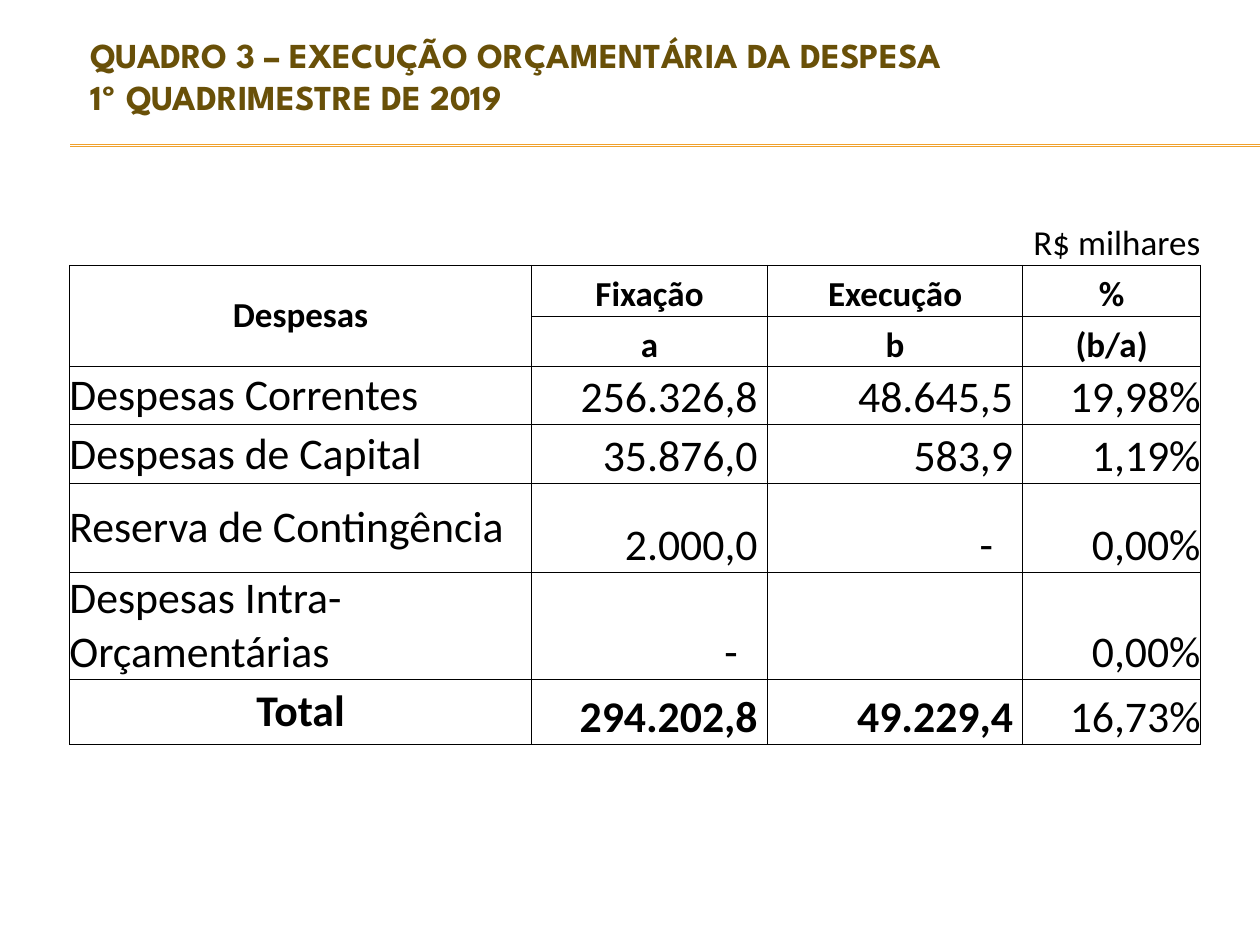
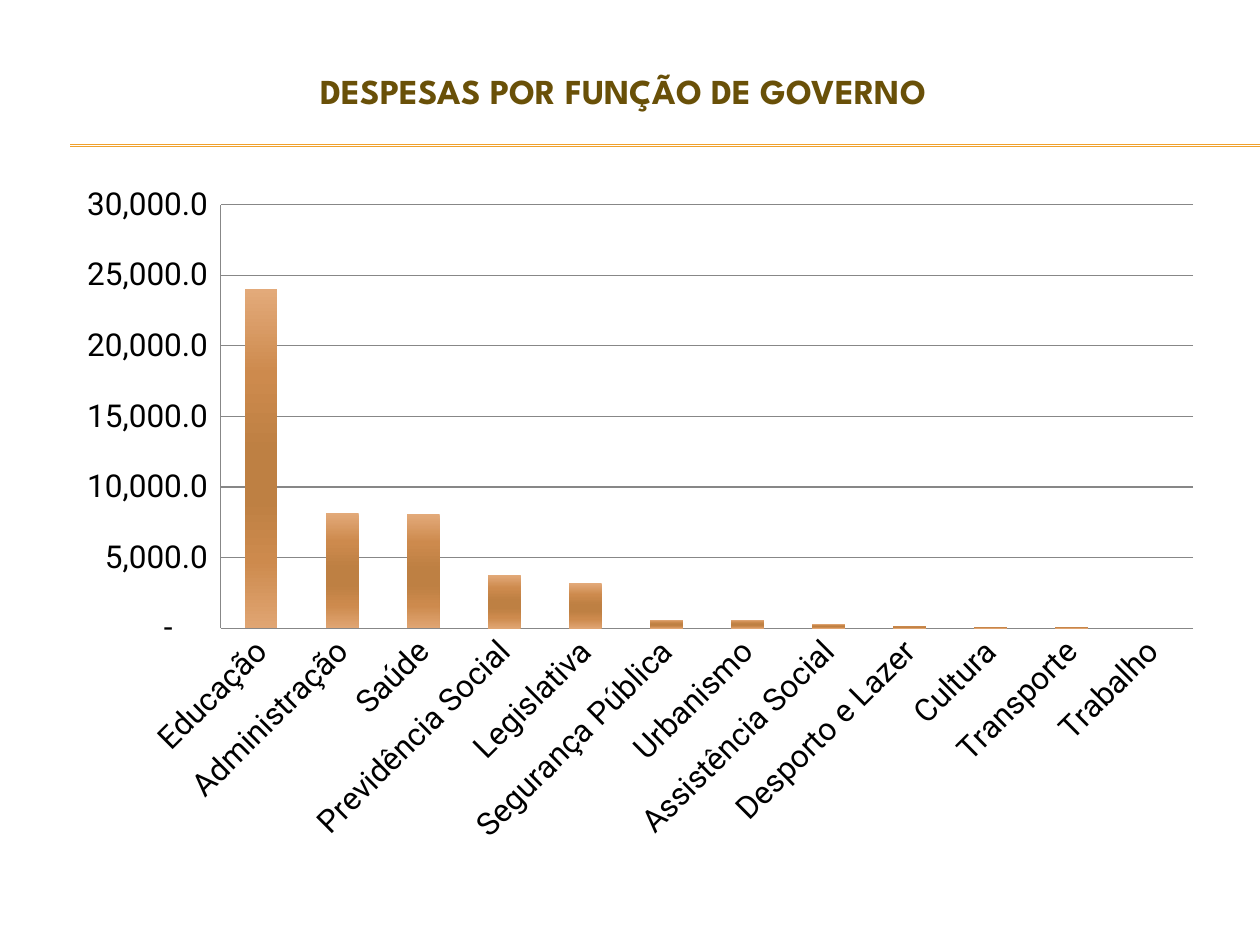
from dataclasses import dataclass
from lxml import etree
from pptx import Presentation
from pptx.chart.data import CategoryChartData
from pptx.dml.color import RGBColor
from pptx.enum.chart import XL_CHART_TYPE as CT, XL_TICK_MARK as TICK
from pptx.enum.shapes import MSO_CONNECTOR
from pptx.enum.text import MSO_ANCHOR as ANCHOR, PP_ALIGN as ALIGN
from pptx.oxml import parse_xml
from pptx.oxml.ns import nsdecls, qn
from pptx.util import Cm, Pt

COLORS = {"title": "695008", "rule": "F0A22E", "text": "000000", "axis": "878787"}
# Bar gradient: position in percent, colour
BAR_STOPS = [(0, "E3AA7A"), (25, "CD8A4D"), (48, "BE8043"), (62, "BE8043"),
             (80, "CD8A4D"), (100, "E0A573")]
TITLE_FONT, TABLE_FONT, CHART_FONT = "League Spartan", "Calibri", "Roboto"


@dataclass
class Box:
    left: float
    top: float
    width: float
    height: float

    def cm(self) -> tuple:
        return Cm(self.left), Cm(self.top), Cm(self.width), Cm(self.height)


@dataclass
class Expense:
    name: str
    fixed: str
    spent: str
    share: str
    total: bool = False


def rgb(name: str) -> RGBColor:
    return RGBColor.from_string(COLORS[name])


def write(tf, text: str, *, size: float, font: str, color: str = "text",
          bold: bool = False, align=ALIGN.LEFT) -> None:
    p = tf.paragraphs[0]
    p.alignment = align
    for i, line in enumerate(text.split("\n")):
        if i:
            p.add_line_break()
        r = p.add_run()
        r.text = line
        r.font.size, r.font.name, r.font.bold = Pt(size), font, bold
        r.font.color.rgb = rgb(color)


# Shared slide frame: double rule and title
def add_rule(s, y: float) -> None:
    line = s.shapes.add_connector(MSO_CONNECTOR.STRAIGHT, Cm(1.42), Cm(y), Cm(25.4), Cm(y))
    line.line.color.rgb = rgb("rule")
    line.line.width = Pt(0.75)
    etree.SubElement(line._element.spPr, qn("a:effectLst"))


def add_titled_slide(prs, title: str, box: Box, align):
    s = prs.slides.add_slide(prs.slide_layouts[6])
    for y in (2.92, 2.95):
        add_rule(s, y)
    tf = s.shapes.add_textbox(*box.cm()).text_frame
    tf.word_wrap = True
    tf.vertical_anchor = ANCHOR.MIDDLE
    write(tf, title, size=20, font=TITLE_FONT, color="title", bold=True, align=align)
    return s


# Table of expenses
COL_WIDTHS = [9.32, 0.33, 4.42, 2.51, 2.64, 3.58]
ROW_HEIGHTS = [1.78, 1.02, 1.02, 1.17, 1.19, 1.78, 2.16, 1.32]
HEADERS = [("Fixação", "a"), ("Execução", "b"), ("%", "(b/a)")]
VALUE_COLS = (1, 3, 5)
EXPENSES = [
    Expense("Despesas Correntes", "256.326,8", "48.645,5", "19,98%"),
    Expense("Despesas de Capital", "35.876,0", "583,9", "1,19%"),
    Expense("Reserva de Contingência", "2.000,0", "-", "0,00%"),
    Expense("Despesas Intra-Orçamentárias", "-", "", "0,00%"),
    Expense("Total", "294.202,8", "49.229,4", "16,73%", total=True),
]


def style_cell(cell, sides: str) -> None:
    cell.margin_left = cell.margin_right = cell.margin_top = cell.margin_bottom = 0
    cell.fill.background()
    tc_pr = cell._tc.get_or_add_tcPr()
    for i, side in enumerate(sides):
        tc_pr.insert(i, parse_xml(
            f'<a:ln{side} {nsdecls("a")} w="6350"><a:solidFill>'
            f'<a:srgbClr val="{COLORS["text"]}"/></a:solidFill></a:ln{side}>'))


def fill_cell(cell, text: str, *, anchor=ANCHOR.BOTTOM, inset: float = 0,
              size: float = 20, **fmt) -> None:
    cell.vertical_anchor = anchor
    cell.margin_right = Cm(inset)
    write(cell.text_frame, text, size=size, font=TABLE_FONT, **fmt)


def add_expense_table(s) -> None:
    box = Box(1.4, 3.57, sum(COL_WIDTHS), sum(ROW_HEIGHTS))
    tbl = s.shapes.add_table(len(ROW_HEIGHTS), len(COL_WIDTHS), *box.cm()).table
    tbl.first_row = tbl.horz_banding = False
    for col, width in zip(tbl.columns, COL_WIDTHS):
        col.width = Cm(width)
    for i, (row, height) in enumerate(zip(tbl.rows, ROW_HEIGHTS)):
        row.height = Cm(height)
        for cell in row.cells:
            style_cell(cell, "LRTB" if i else "B")
        if i:
            for c in (1, 3):
                tbl.cell(i, c).merge(tbl.cell(i, c + 1))
    tbl.cell(1, 0).merge(tbl.cell(2, 0))

    # Unit and headings
    fill_cell(tbl.cell(0, 5), "R$ milhares", align=ALIGN.RIGHT)
    fill_cell(tbl.cell(1, 0), "Despesas", anchor=ANCHOR.MIDDLE, bold=True, align=ALIGN.CENTER)
    for c, pair in zip(VALUE_COLS, HEADERS):
        for i, text in enumerate(pair, 1):
            fill_cell(tbl.cell(i, c), text, bold=True, align=ALIGN.CENTER)

    # Body
    for i, e in enumerate(EXPENSES, 3):
        fill_cell(tbl.cell(i, 0), e.name, anchor=ANCHOR.MIDDLE, size=25, bold=e.total,
                  align=ALIGN.CENTER if e.total else ALIGN.LEFT)
        for c, text in zip(VALUE_COLS, (e.fixed, e.spent, e.share)):
            if text:
                is_share = c == VALUE_COLS[-1]
                inset = 0 if is_share else 0.6 if text == "-" else 0.2
                fill_cell(tbl.cell(i, c), text, size=25, inset=inset,
                          bold=e.total and not is_share, align=ALIGN.RIGHT)


# Chart of spending by function
SPENDING = {
    "Educação": 24000, "Administração": 8200, "Saúde": 8100, "Previdência Social": 3800,
    "Legislativa": 3200, "Segurança Pública": 600, "Urbanismo": 600,
    "Assistência Social": 300, "Desporto e Lazer": 200, "Cultura": 100,
    "Transporte": 100, "Trabalho": 0,
}
NUMBER_FORMAT = '_-* #,##0.0_-;\\-* #,##0.0_-;_-* "-"??_-;_-@_-'
PLOT_LAYOUT = {"x": 0.155, "y": 0.144, "w": 0.83, "h": 0.525}


def set_plot_layout(chart) -> None:
    area = chart._chartSpace.chart.plotArea
    for old in area.findall(qn("c:layout")):
        area.remove(old)
    modes = "".join(f'<c:{k}Mode val="edge"/>' for k in "xy")
    sizes = "".join(f'<c:{k} val="{v}"/>' for k, v in PLOT_LAYOUT.items())
    area.insert(0, parse_xml(
        f'<c:layout {nsdecls("c")}><c:manualLayout><c:layoutTarget val="inner"/>'
        f'{modes}{sizes}</c:manualLayout></c:layout>'))


def set_bar_gradient(series) -> None:
    stops = "".join(f'<a:gs pos="{pos * 1000}"><a:srgbClr val="{color}"/></a:gs>'
                    for pos, color in BAR_STOPS)
    sp_pr = series._element.get_or_add_spPr()
    sp_pr.insert(0, parse_xml(
        f'<a:gradFill {nsdecls("a")} rotWithShape="1"><a:gsLst>{stops}</a:gsLst>'
        f'<a:lin ang="5400000" scaled="0"/></a:gradFill>'))


def add_spending_chart(s) -> None:
    data = CategoryChartData()
    data.categories = list(SPENDING)
    data.add_series("Series 1", list(SPENDING.values()))
    box = Box(0.79, 1.78, 23.62, 16.28)
    chart = s.shapes.add_chart(CT.COLUMN_CLUSTERED, *box.cm(), data).chart
    chart.has_legend = chart.has_title = False
    chart.font.size, chart.font.name = Pt(18), CHART_FONT
    chart.font.color.rgb = rgb("text")
    set_plot_layout(chart)

    plot = chart.plots[0]
    plot.gap_width, plot.vary_by_categories = 150, False
    set_bar_gradient(plot.series[0])

    cats, vals = chart.category_axis, chart.value_axis
    for axis in (cats, vals):
        axis.major_tick_mark = axis.minor_tick_mark = TICK.NONE
        axis.format.line.color.rgb = rgb("axis")
        axis.tick_labels.font.size = Pt(18)
    cats._element.find(qn("c:txPr")).find(qn("a:bodyPr")).set("rot", "-2700000")
    vals.minimum_scale, vals.maximum_scale, vals.major_unit = 0, 30000, 5000
    vals.has_major_gridlines = True
    vals.major_gridlines.format.line.color.rgb = rgb("axis")
    vals.tick_labels.number_format = NUMBER_FORMAT
    vals.tick_labels.number_format_is_linked = False


def main() -> None:
    prs = Presentation()
    prs.slide_width, prs.slide_height = Cm(25.4), Cm(19.05)
    s = add_titled_slide(
        prs, "QUADRO 3 – EXECUÇÃO ORÇAMENTÁRIA DA DESPESA\n1º QUADRIMESTRE DE 2019",
        Box(1.57, 0.58, 21.59, 1.88), ALIGN.LEFT)
    add_expense_table(s)
    s = add_titled_slide(prs, "DESPESAS POR FUNÇÃO DE GOVERNO",
                         Box(1.78, 1.4, 21.59, 0.84), ALIGN.CENTER)
    add_spending_chart(s)
    prs.save("out.pptx")


if __name__ == "__main__":
    main()
